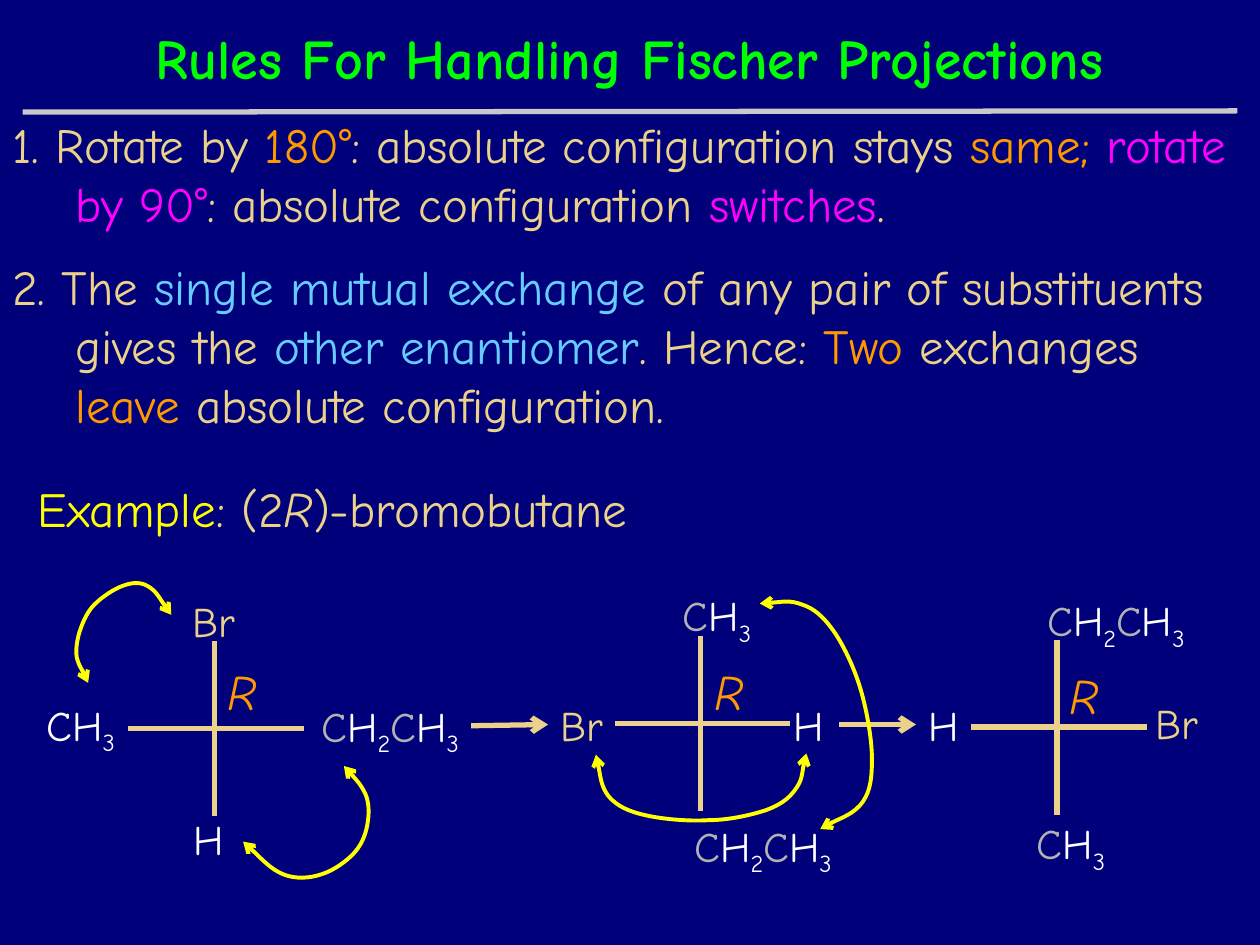
from dataclasses import dataclass
from itertools import islice

from lxml import etree
from pptx import Presentation
from pptx.dml.color import RGBColor
from pptx.enum import shapes, text
from pptx.oxml import ns
from pptx.util import Inches, Pt


@dataclass(frozen=True)
class Theme:
    font: str = "Comic Neue"
    navy: str = "00007A"
    green: str = "00FF00"
    sand: str = "EBD189"
    orange: str = "FF9900"
    magenta: str = "FF00FF"
    sky: str = "66CCFF"
    yellow: str = "FFFF00"
    white: str = "FFFFFF"
    grey: str = "B2B2B2"
    rule: str = "C9C9C9"
    title_size: int = 32
    body_size: int = 28
    formula_size: int = 24
    bond: float = 3
    curve: float = 2.25


T = Theme()

RULES = [
    [("1. Rotate by ", T.sand), ("180°", T.orange),
     (": absolute configuration stays ", T.sand), ("same; ", T.orange),
     ("rotate by 90°", T.magenta), (": absolute configuration ", T.sand),
     ("switches", T.magenta), (".", T.sand)],
    [("2. The ", T.sand), ("single mutual exchange", T.sky),
     (" of any pair of substituents gives the ", T.sand),
     ("other enantiomer", T.sky), (". Hence: ", T.sand), ("Two", T.orange),
     (" exchanges ", T.sand), ("leave", T.orange),
     (" absolute configuration.", T.sand)],
]

LABEL_WIDTHS = {"Br": 0.78, "H": 0.78, "CH3": 1.07, "CH2CH3": 1.47}

EXCHANGES = [
    [(2.73, 6.08), (2.76, 6.11), (2.86, 6.22), (2.9, 6.3),
     (2.93, 6.37), (2.93, 6.45), (2.92, 6.52),
     (2.91, 6.6), (2.88, 6.69), (2.82, 6.76),
     (2.76, 6.83), (2.65, 6.91), (2.55, 6.94),
     (2.46, 6.97), (2.35, 6.98), (2.25, 6.94),
     (2.15, 6.9), (2, 6.74), (1.93, 6.68)],
    [(0.7, 5.42), (0.69, 5.38), (0.63, 5.29), (0.61, 5.22),
     (0.6, 5.16), (0.61, 5.09), (0.63, 5.02),
     (0.65, 4.96), (0.68, 4.88), (0.73, 4.82),
     (0.78, 4.76), (0.88, 4.69), (0.95, 4.66),
     (1.02, 4.63), (1.1, 4.61), (1.17, 4.65),
     (1.24, 4.69), (1.32, 4.83), (1.36, 4.88)],
    [(6.4, 5.98), (6.38, 6.03), (6.37, 6.19), (6.31, 6.27),
     (6.26, 6.34), (6.19, 6.39), (6.08, 6.43),
     (5.96, 6.47), (5.78, 6.51), (5.62, 6.51),
     (5.46, 6.52), (5.25, 6.5), (5.12, 6.47),
     (4.99, 6.44), (4.9, 6.4), (4.83, 6.32),
     (4.77, 6.24), (4.75, 6.06), (4.73, 5.99)],
    [(6.03, 4.79), (6.09, 4.79), (6.27, 4.76), (6.37, 4.8),
     (6.46, 4.83), (6.53, 4.89), (6.61, 5),
     (6.69, 5.11), (6.78, 5.3), (6.83, 5.47),
     (6.88, 5.64), (6.92, 5.87), (6.92, 6.02),
     (6.92, 6.17), (6.91, 6.27), (6.85, 6.36),
     (6.78, 6.46), (6.58, 6.53), (6.51, 6.58)],
]


def add_run(paragraph, words, color, size, italic=False, bold=False, subscript=False):
    run = paragraph.add_run()
    run.text = words
    font = run.font
    font.name, font.size = T.font, Pt(size)
    font.italic, font.bold = italic, bold
    font.color.rgb = RGBColor.from_string(color)
    if subscript:
        font._element.set("baseline", "-25000")


def add_text(slide, left, top, width, height):
    box = slide.shapes.add_textbox(*map(Inches, (left, top, width, height)))
    box.text_frame.word_wrap = True
    return box


def style_line(line, color, width, *arrow_ends):
    line.color.rgb = RGBColor.from_string(color)
    line.width = Pt(width)
    for end in arrow_ends:
        etree.SubElement(line._get_or_add_ln(), ns.qn(f"a:{end}"), type="arrow")


def add_line(slide, start, end, color=T.sand, arrow_ends=()):
    line = slide.shapes.add_connector(
        shapes.MSO_CONNECTOR.STRAIGHT, *map(Inches, (*start, *end)))
    style_line(line.line, color, T.bond, *arrow_ends)
    etree.SubElement(line._element.spPr, ns.qn("a:effectLst"))
    return line


def add_title(slide, left, top, width, height):
    title = slide.shapes.title
    title.left, title.top, title.width, title.height = map(
        Inches, (left, top, width, height))
    title.text_frame.vertical_anchor = text.MSO_ANCHOR.MIDDLE
    paragraph = title.text_frame.paragraphs[0]
    paragraph.alignment = text.PP_ALIGN.CENTER
    add_run(paragraph, "Rules For Handling Fischer Projections",
            T.green, T.title_size, bold=True)
    add_line(slide, (0.18, 0.89), (9.82, 0.88), T.rule)


def add_rules(slide, left, top, width, height):
    frame = add_text(slide, left, top, width, height).text_frame
    for number, rule in enumerate(RULES):
        paragraph = frame.add_paragraph() if number else frame.paragraphs[0]
        properties = paragraph._p.get_or_add_pPr()
        properties.set("marL", str(Inches(0.5)))
        properties.set("indent", str(Inches(-0.5)))
        if number:
            paragraph.space_before = Pt(14)
        for words, color in rule:
            add_run(paragraph, words, color, T.body_size)


def add_example(slide, left, top, width, height):
    paragraph = add_text(slide, left, top, width, height).text_frame.paragraphs[0]
    add_run(paragraph, "Example", T.yellow, T.body_size)
    add_run(paragraph, ": (2", T.sand, T.body_size)
    add_run(paragraph, "R", T.sand, T.body_size, italic=True)
    add_run(paragraph, ")-bromobutane", T.sand, T.body_size)


def add_formula(slide, formula, left, top, carbon=T.grey):
    label = add_text(slide, left, top, LABEL_WIDTHS[formula], 0.5)
    paragraph = label.text_frame.paragraphs[0]
    if formula == "CH2CH3":
        paragraph.alignment = text.PP_ALIGN.RIGHT
    if formula == "Br":
        add_run(paragraph, formula, T.sand, T.formula_size)
        return label
    for symbol in formula:
        add_run(paragraph, symbol, carbon if symbol == "C" else T.white,
                T.formula_size, subscript=symbol.isdigit())
    return label


def add_projection(slide, left, top, size, descriptor_at, substituents, carbon=T.grey):
    middle_x, middle_y = left + 0.68, top + 0.69
    add_line(slide, (middle_x, top), (middle_x, top + size))
    add_line(slide, (left, middle_y), (left + size, middle_y))
    descriptor = add_text(slide, *descriptor_at, 0.7, 0.57)
    add_run(descriptor.text_frame.paragraphs[0], "R", T.orange, T.body_size, italic=True)
    return {side: add_formula(slide, formula, x, y, carbon if formula == "CH3" else T.grey)
            for side, (formula, x, y) in substituents.items()}


def add_exchange(slide, points):
    start, *rest = [(Inches(x), Inches(y)) for x, y in points]
    builder = slide.shapes.build_freeform(*start)
    builder.add_line_segments(rest, close=False)
    curve = builder.convert_to_shape()
    curve.shadow.inherit = False
    curve.fill.background()
    style_line(curve.line, T.yellow, T.curve, "headEnd", "tailEnd")
    segments = iter(list(curve._element.spPr.iter(ns.qn("a:lnTo"))))
    while triple := list(islice(segments, 3)):
        bezier = etree.Element(ns.qn("a:cubicBezTo"))
        triple[0].addprevious(bezier)
        for segment in triple:
            bezier.append(segment[0])
            segment.getparent().remove(segment)


def add_scheme(slide):
    first = add_projection(slide, 1.02, 5.09, 1.39, (1.71, 5.2), {
        "top": ("Br", 1.43, 4.68), "left": ("CH3", 0.27, 5.5),
        "right": ("CH2CH3", 2.27, 5.51), "bottom": ("H", 1.44, 6.41)}, carbon=T.white)
    second = add_projection(slide, 4.88, 5.05, 1.39, (5.57, 5.2), {
        "top": ("CH3", 5.32, 4.63), "left": ("Br", 4.35, 5.5),
        "right": ("H", 6.2, 5.5), "bottom": ("CH2CH3", 5.23, 6.46)})
    third = add_projection(slide, 7.71, 5.08, 1.39, (8.39, 5.23), {
        "top": ("CH2CH3", 8.03, 4.67), "left": ("H", 7.27, 5.5),
        "right": ("Br", 9.07, 5.49), "bottom": ("CH3", 8.13, 6.44)})
    first_step = add_line(slide, (3.76, 5.76), (4.39, 5.76), arrow_ends=("tailEnd",))
    first_step.begin_connect(first["right"], 3)
    first_step.end_connect(second["left"], 1)
    second_step = add_line(slide, (6.66, 5.75), (7.29, 5.75), arrow_ends=("tailEnd",))
    second_step.end_connect(third["left"], 1)
    for points in EXCHANGES:
        add_exchange(slide, points)


def main():
    deck = Presentation()
    deck.slide_width, deck.slide_height = Inches(10), Inches(7.5)
    slide = deck.slides.add_slide(deck.slide_layouts[5])
    slide.background.fill.solid()
    slide.background.fill.fore_color.rgb = RGBColor.from_string(T.navy)
    add_title(slide, 0.49, 0.05, 9.02, 0.8)
    add_rules(slide, 0, 0.86, 10, 2.69)
    add_example(slide, 0.2, 3.75, 5.48, 0.57)
    add_scheme(slide)
    deck.save("out.pptx")


if __name__ == "__main__":
    main()
